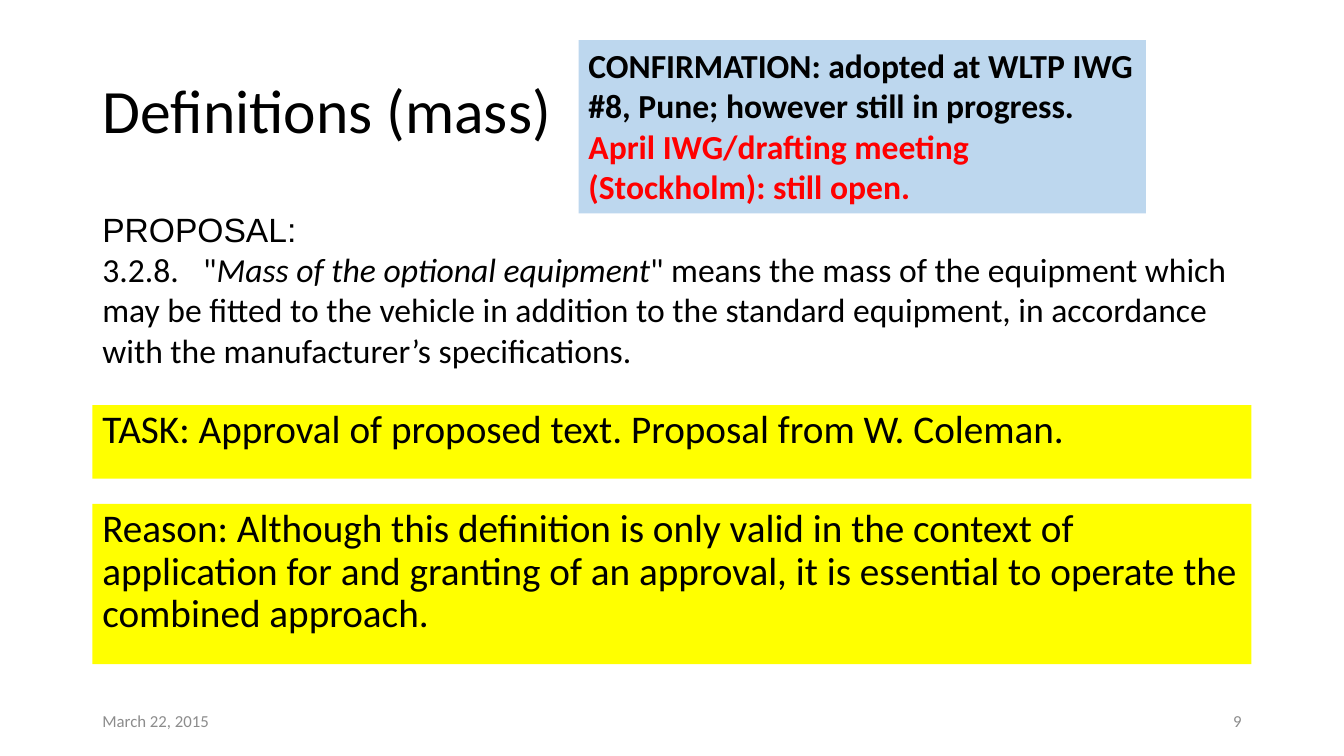
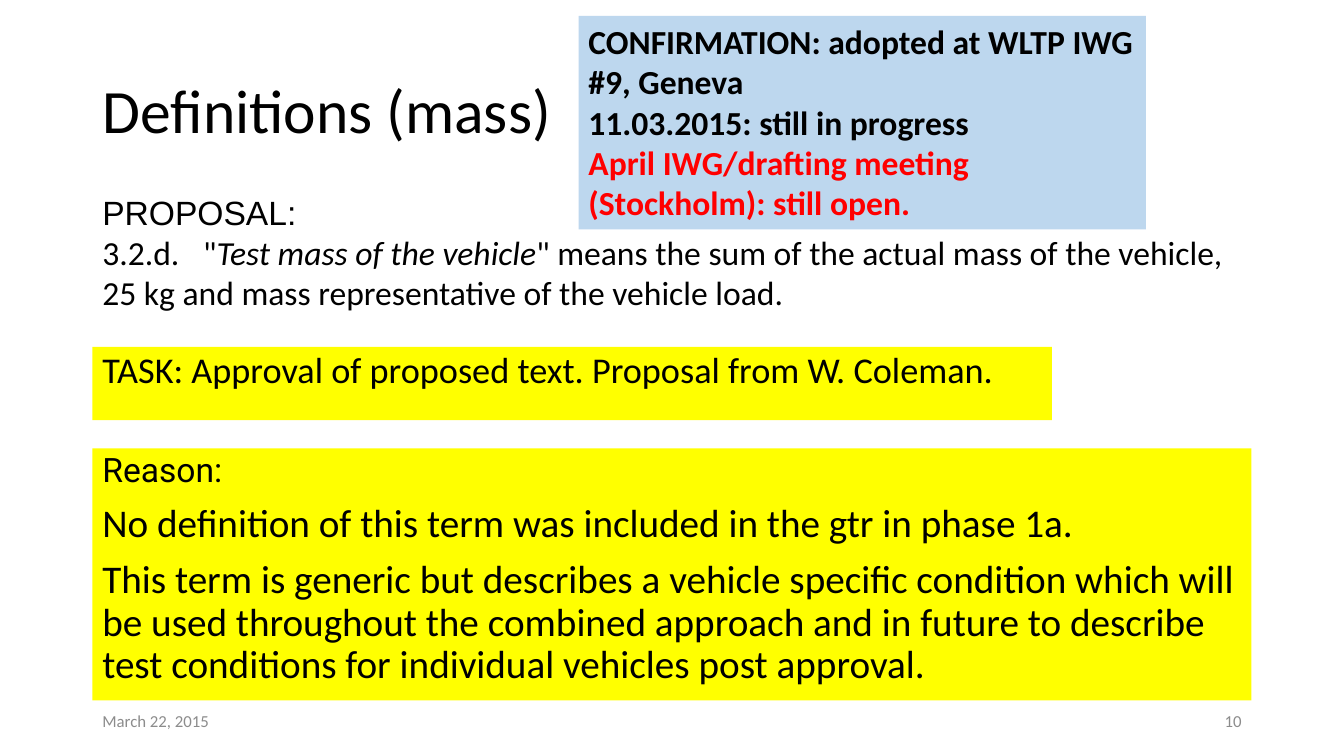
"""Build two slides on the mass definitions proposed for approval."""
from dataclasses import dataclass

import pptx
import pptx.dml.color
import pptx.enum.shapes
import pptx.enum.text
import pptx.util
from pptx.util import Cm

ALIGN = pptx.enum.text.PP_ALIGN
ANCHOR = pptx.enum.text.MSO_ANCHOR


@dataclass(frozen=True)
class Theme:
    """Colours, fonts, type sizes and shared measures."""

    black: str = "000000"
    red: str = "FF0000"
    grey: str = "8C8C8C"
    yellow: str = "FFFF00"
    light_blue: str = "BDD7EE"
    font: str = "Calibri"
    label_font: str = "Arial"
    reason_font: str = "Roboto"
    title_size: float = 44
    large_size: float = 28
    reduced_size: float = 25.9
    body_size: float = 24
    footer_size: float = 12
    left: float = 2.33
    width: float = 29.21
    title_width: float = 12.2
    status_left: float = 14.58
    status_width: float = 14.3
    footer_top: float = 17.65
    footer_width: float = 7.62
    footer_height: float = 1.02


THEME = Theme()
TITLE = "Definitions (mass)"
DATE = "March 22, 2015"
TASK = "TASK: Approval of proposed text. Proposal from W. Coleman."
STILL_OPEN = "April IWG/drafting meeting (Stockholm): still open."


def style_font(font, size, color=THEME.black, name=THEME.font, bold=None):
    """Set the typeface, size, colour and weight of a font."""
    font.name = name
    font.size = pptx.util.Pt(size)
    font.bold = bold
    font.color.rgb = pptx.dml.color.RGBColor.from_string(color)


def next_paragraph(frame, index):
    """Return the first paragraph of a frame or a new one after it."""
    return frame.add_paragraph() if index else frame.paragraphs[0]


def add_title(slide):
    """Place and format the title placeholder beside the status panel."""
    title = slide.shapes.title
    title.left, title.top = Cm(THEME.left), Cm(1.01)
    title.width, title.height = Cm(THEME.title_width), Cm(3.68)
    frame = title.text_frame
    frame.text = TITLE
    frame.auto_size = pptx.enum.text.MSO_AUTO_SIZE.NONE
    frame.vertical_anchor = ANCHOR.MIDDLE
    paragraph = frame.paragraphs[0]
    paragraph.alignment = ALIGN.LEFT
    paragraph.line_spacing = 0.9
    style_font(paragraph.font, THEME.title_size)


def add_text_box(slide, left, top, width, height):
    """Add a wrapping text box and return its frame."""
    box = slide.shapes.add_textbox(Cm(left), Cm(top), Cm(width), Cm(height))
    box.text_frame.word_wrap = True
    return box.text_frame


def add_panel(slide, left, top, width, height, fill):
    """Add a plain filled rectangle and return its frame."""
    panel = slide.shapes.add_shape(
        pptx.enum.shapes.MSO_SHAPE.RECTANGLE, Cm(left), Cm(top), Cm(width), Cm(height))
    panel.shadow.inherit = False
    panel.fill.solid()
    panel.fill.fore_color.rgb = pptx.dml.color.RGBColor.from_string(fill)
    panel.line.fill.background()
    panel.text_frame.word_wrap = True
    panel.text_frame.vertical_anchor = ANCHOR.TOP
    return panel.text_frame


def add_highlight(slide, top, height, lines, width=THEME.width):
    """Add a yellow panel whose lines are (text, size, font name)."""
    frame = add_panel(slide, THEME.left, top, width, height, THEME.yellow)
    for index, (text, size, name) in enumerate(lines):
        paragraph = next_paragraph(frame, index)
        paragraph.text = text
        paragraph.alignment = ALIGN.LEFT
        paragraph.line_spacing = 0.9
        paragraph.space_before = pptx.util.Pt(10)
        style_font(paragraph.font, size, name=name)


def add_proposal(slide, top, height, number, term, meaning):
    """Add the proposed definition with its term in italics."""
    frame = add_text_box(slide, THEME.left, top, THEME.width, height)
    label = frame.paragraphs[0]
    label.text = "PROPOSAL:"
    style_font(label.font, THEME.body_size, name=THEME.label_font)
    definition = frame.add_paragraph()
    style_font(definition.font, THEME.body_size)
    for text, italic in ((f'{number}\t"', None), (term, True), (f'" {meaning}', None)):
        run = definition.add_run()
        run.text = text
        run.font.italic = italic


def add_confirmation(slide, top, height, paragraphs):
    """Add the blue status panel; each paragraph lists (text, colour) runs."""
    frame = add_panel(
        slide, THEME.status_left, top, THEME.status_width, height, THEME.light_blue)
    for index, runs in enumerate(paragraphs):
        paragraph = next_paragraph(frame, index)
        paragraph.alignment = ALIGN.LEFT
        for text, color in runs:
            run = paragraph.add_run()
            run.text = text
            style_font(run.font, THEME.body_size, color, bold=True)


def add_footer(slide, number):
    """Add the date on the left and the slide number on the right."""
    right = THEME.left + THEME.width - THEME.footer_width
    for left, text, alignment in (
            (THEME.left, DATE, ALIGN.LEFT), (right, str(number), ALIGN.RIGHT)):
        frame = add_text_box(
            slide, left, THEME.footer_top, THEME.footer_width, THEME.footer_height)
        frame.vertical_anchor = ANCHOR.MIDDLE
        paragraph = frame.paragraphs[0]
        paragraph.text = text
        paragraph.alignment = alignment
        style_font(paragraph.font, THEME.footer_size, THEME.grey)


def add_slide(presentation, number):
    """Add a title-only slide with its title and footer."""
    slide = presentation.slides.add_slide(presentation.slide_layouts[5])
    add_title(slide)
    add_footer(slide, number)
    return slide


def build_optional_equipment(presentation):
    """Build the slide on the mass of the optional equipment."""
    slide = add_slide(presentation, 9)
    add_proposal(
        slide, 5.13, 4.37, "3.2.8.", "Mass of the optional equipment",
        "means the mass of the equipment which may be fitted to the vehicle in addition "
        "to the standard equipment, in accordance with the manufacturer’s specifications.")
    add_highlight(slide, 10.21, 1.85, [(TASK, THEME.large_size, THEME.font)])
    add_highlight(slide, 12.7, 4.04, [(
        "Reason: Although this definition is only valid in the context of application for "
        "and granting of an approval, it is essential to operate the combined approach.",
        THEME.large_size, THEME.font)])
    add_confirmation(slide, 1.01, 4.37, [[
        ("CONFIRMATION: adopted at WLTP IWG #8, Pune; however still in progress. ",
         THEME.black),
        (STILL_OPEN, THEME.red)]])


def build_test_mass(presentation):
    """Build the slide on the test mass of the vehicle."""
    slide = add_slide(presentation, 10)
    add_proposal(
        slide, 4.7, 3.33, "3.2.d.", "Test mass of the vehicle",
        "means the sum of the actual mass of the vehicle, 25 kg and mass representative "
        "of the vehicle load.")
    add_highlight(
        slide, 8.74, 1.85, [(TASK, THEME.reduced_size, THEME.font)], width=24.18)
    add_highlight(slide, 11.3, 6.35, [
        ("Reason:", THEME.body_size, THEME.reason_font),
        ("No definition of this term was included in the gtr in phase 1a.",
         THEME.large_size, THEME.font),
        ("This term is generic but describes a vehicle specific condition which will be "
         "used throughout the combined approach and in future to describe test conditions "
         "for individual vehicles post approval.", THEME.large_size, THEME.font)])
    add_confirmation(slide, 0.4, 5.38, [
        [("CONFIRMATION: adopted at WLTP IWG #9, Geneva", THEME.black)],
        [("11.03.2015: still in progress", THEME.black)],
        [(STILL_OPEN, THEME.red)]])


def main():
    """Create and save the presentation."""
    presentation = pptx.Presentation()
    presentation.slide_width = Cm(33.87)
    presentation.slide_height = Cm(19.05)
    build_optional_equipment(presentation)
    build_test_mass(presentation)
    presentation.save("out.pptx")


if __name__ == "__main__":
    main()
